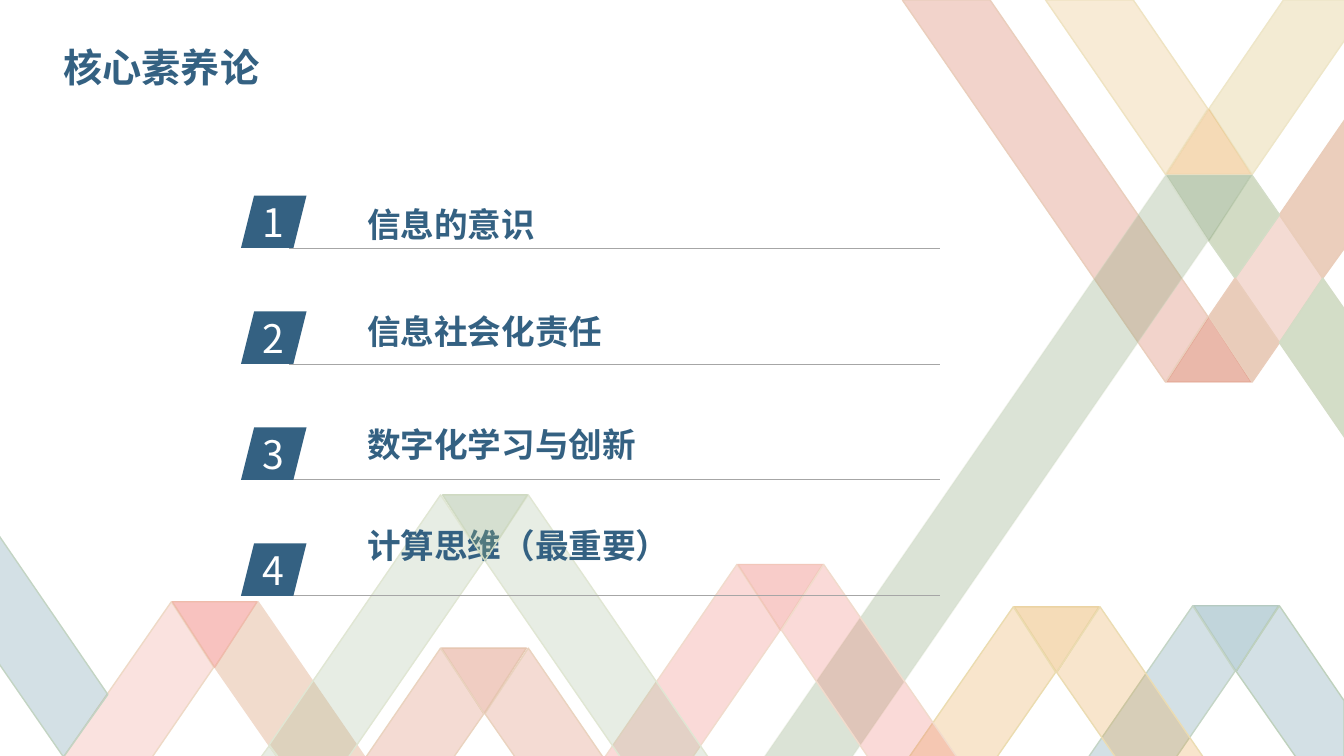
import dataclasses
import typing

import lxml.etree
import pptx
import pptx.dml.color
import pptx.enum.shapes
import pptx.enum.text
import pptx.oxml.ns
import pptx.util

Inches = pptx.util.Inches
Points = tuple[tuple[float, float], ...]


@dataclasses.dataclass(frozen=True)
class Theme:
    font: str = "Noto Sans CJK SC"
    navy: str = "346182"
    white: str = "FFFFFF"
    rule: str = "A6A6A6"
    coral: str = "D57053"
    rose: str = "ED6F65"
    sage: str = "A2B894"
    moss: str = "88A378"
    teal: str = "508799"
    amber: str = "E49B35"
    title_size: int = 28
    item_size: int = 24
    number_size: int = 28


@dataclasses.dataclass(frozen=True)
class Ribbon:
    points: Points
    fill: str
    opacity: int
    line: str
    line_opacity: int = 100


@dataclasses.dataclass(frozen=True)
class Item:
    text: str
    space_before: int


THEME = Theme()
FOLD_WIDTH, FOLD_HEIGHT, FOLD_APEX = 0.84, 0.65, 0.42
ITEM_PITCH = 1.15

ITEMS = (
    Item("信息的意识", 0),
    Item("信息社会化责任", 48),
    Item("数字化学习与创新", 52),
    Item("计算思维（最重要）", 43),
)


def fold(left: float, top: float, points_up: bool = False) -> Points:
    apex_y, base_y = (top, top + FOLD_HEIGHT) if points_up else (top + FOLD_HEIGHT, top)
    return ((left + FOLD_APEX, apex_y), (left + FOLD_WIDTH, base_y), (left, base_y))


RIBBONS = (
    Ribbon(((1.7, 5.97), (2.12, 6.62), (1.49, 7.54), (0.61, 7.54)), "EE8F82", 25, "EED9C6"),
    Ribbon(((2.56, 5.97), (3.64, 7.54), (2.77, 7.54), (2.13, 6.62)), "F1DBCC", 100, "F1DBCC"),
    Ribbon(((7.31, 5.6), (7.74, 6.25), (6.85, 7.54), (5.98, 7.54)), THEME.rose, 25, "F1DBCC"),
    Ribbon(fold(11.57, 3.14, True), THEME.coral, 49, "DF9B83", 49),
    Ribbon(((10.37, 0), (11.24, 0), (11.98, 1.08), (11.56, 1.73)), "E7B05E", 25, "EFE3C2"),
    Ribbon(((12.73, 0), (13.35, 0), (13.35, 0.38), (12.42, 1.73), (11.99, 1.08)),
           "EFE3C2", 71, "EEE6C8"),
    Ribbon(((12.69, 2.13), (13.12, 2.76), (12.69, 3.4), (12.25, 2.76)), THEME.coral, 25, "EAD3BE"),
    Ribbon(((13.35, 1.17), (13.35, 2.44), (13.12, 2.76), (12.69, 2.13)), "EBCEBC", 100, "EACDBA"),
    Ribbon(((12.42, 1.74), (12.69, 2.13), (12.25, 2.76), (11.99, 2.39)), "D2DBC4", 100, "D3DDC7"),
    Ribbon(((12.25, 2.76), (12.69, 3.4), (12.42, 3.79), (11.99, 3.14)), "E9CCBA", 100, "EACDBB"),
    Ribbon(((13.12, 2.76), (13.35, 3.09), (13.35, 4.36), (12.69, 3.4)), "D3DDC7", 100, "D3DCC6"),
    Ribbon(fold(11.57, 1.08, True), THEME.amber, 36, "EBD09D", 36),
    Ribbon(fold(11.57, 1.74), THEME.moss, 53, "B3C4A5", 53),
    Ribbon(((4.37, 4.91), (4.8, 5.56), (3.43, 7.55), (2.79, 7.55), (2.67, 7.39)),
           THEME.sage, 25, "E0E6D3"),
    Ribbon(((5.24, 4.91), (7.05, 7.55), (6.18, 7.55), (4.81, 5.56)), THEME.sage, 25, "E0E6D3"),
    Ribbon(((2.67, 7.4), (2.78, 7.55), (2.56, 7.55)), THEME.sage, 25, "E0E6D3"),
    Ribbon(((-0.04, 5.27), (1.07, 6.89), (0.63, 7.51), (-0.04, 6.54)), THEME.teal, 25, "C3D4C3"),
    Ribbon(((5.24, 6.43), (6, 7.54), (5.13, 7.54), (4.81, 7.08)), THEME.coral, 25, "EAD3BF"),
    Ribbon(fold(4.38, 6.43), THEME.coral, 35, "E6C6B1"),
    Ribbon(fold(7.32, 5.6), THEME.rose, 35, "F2C7BA"),
    Ribbon(fold(11.84, 6.01), THEME.teal, 35, "B5CAC1"),
    Ribbon(((11.83, 6.01), (12.25, 6.66), (11.66, 7.52), (10.79, 7.52)), THEME.teal, 25, "C4D5C6"),
    Ribbon(((12.69, 6.01), (13.33, 6.95), (13.33, 7.52), (12.86, 7.52), (12.26, 6.66)),
           THEME.teal, 25, "BFD1BD"),
    Ribbon(fold(10.06, 6.02), THEME.amber, 35, "EBD3A3"),
    Ribbon(((10.05, 6.02), (10.47, 6.67), (9.86, 7.55), (8.99, 7.55)), THEME.amber, 25, "EBDCB0"),
    Ribbon(((10.91, 6.02), (11.96, 7.55), (11.09, 7.55), (10.48, 6.67)), THEME.amber, 25, "EBDCB2"),
    Ribbon(((4.37, 6.43), (4.8, 7.08), (4.48, 7.54), (3.61, 7.54)), THEME.coral, 25, "EAD3BF"),
    Ribbon(((8.95, 0), (9.82, 0), (11.98, 3.14), (11.56, 3.79)), THEME.coral, 30, "EACEBC"),
    Ribbon(((11.56, 1.74), (11.98, 2.39), (8.43, 7.54), (7.56, 7.54)),
           THEME.moss, 30, "D3DCC5", 30),
    Ribbon(((8.17, 5.6), (9.51, 7.54), (8.63, 7.54), (7.75, 6.25)), THEME.rose, 25, "F1DBCC"),
    Ribbon(fold(1.71, 5.97), "ED5249", 35, "EFBBAB"),
)
TOP_FOLD = Ribbon(fold(4.39, 4.91), "89A67A", 35, "CFDAC2")


def add_element(parent: typing.Any, tag: str, **attributes: str) -> None:
    lxml.etree.SubElement(parent, pptx.oxml.ns.qn(tag), attributes)


def set_attributes(target: typing.Any, values: dict[str, typing.Any]) -> None:
    for name, value in values.items():
        setattr(target, name, value)


def paint(fill: typing.Any, color: str, opacity: int = 100) -> None:
    fill.solid()
    fill.fore_color.rgb = pptx.dml.color.RGBColor.from_string(color)
    if opacity < 100:
        color_element = fill._xPr.find(".//" + pptx.oxml.ns.qn("a:srgbClr"))
        add_element(color_element, "a:alpha", val=str(opacity * 1000))


def draw_ribbon(shapes: typing.Any, ribbon: Ribbon) -> None:
    corners = [(Inches(x), Inches(y)) for x, y in ribbon.points]
    builder = shapes.build_freeform(*corners[0])
    builder.add_line_segments(corners[1:], close=True)
    shape = builder.convert_to_shape()
    shape.shadow.inherit = False
    paint(shape.fill, ribbon.fill, ribbon.opacity)
    paint(shape.line.fill, ribbon.line, ribbon.line_opacity)
    shape.line.width = pptx.util.Pt(1)


def write_run(paragraph: typing.Any, text: str, size: int, color: str, bold: bool) -> None:
    run = paragraph.add_run()
    run.text = text
    set_attributes(run.font, {"name": THEME.font, "size": pptx.util.Pt(size), "bold": bold})
    paint(run.font.fill, color)
    add_element(run.font._element, "a:ea", typeface=THEME.font)


def place(shape: typing.Any, left: float, top: float, width: float, height: float) -> None:
    set_attributes(shape, {"left": Inches(left), "top": Inches(top),
                           "width": Inches(width), "height": Inches(height)})


def format_frame(frame: typing.Any, anchor: typing.Any, wrap: bool = True) -> None:
    set_attributes(frame, {"word_wrap": wrap, "vertical_anchor": anchor,
                           "auto_size": pptx.enum.text.MSO_AUTO_SIZE.NONE})


def draw_number(shapes: typing.Any, number: int) -> None:
    top = 1.94 + (number - 1) * ITEM_PITCH
    group = shapes.add_group_shape().shapes
    rule = group.add_connector(pptx.enum.shapes.MSO_CONNECTOR.STRAIGHT, Inches(2.87),
                               Inches(top + 0.52), Inches(9.32), Inches(top + 0.52))
    paint(rule.line.fill, THEME.rule)
    rule.line.width = pptx.util.Pt(0.5)
    add_element(rule.element.spPr, "a:effectLst")
    tile = group.add_shape(pptx.enum.shapes.MSO_SHAPE.PARALLELOGRAM, Inches(2.39),
                           Inches(top), Inches(0.65), Inches(0.52))
    tile.shadow.inherit = False
    paint(tile.fill, THEME.navy)
    tile.line.fill.background()
    label = group.add_textbox(Inches(2.4), Inches(top - 0.02), Inches(0.63), Inches(0.57))
    format_frame(label.text_frame, pptx.enum.text.MSO_ANCHOR.TOP)
    paragraph = label.text_frame.paragraphs[0]
    paragraph.alignment = pptx.enum.text.PP_ALIGN.CENTER
    write_run(paragraph, str(number), THEME.number_size, THEME.white, False)


def write_items(body: typing.Any) -> None:
    place(body, 3.54, 1.97, 3.5, 3.94)
    frame = body.text_frame
    format_frame(frame, pptx.enum.text.MSO_ANCHOR.TOP)
    for index, item in enumerate(ITEMS):
        paragraph = frame.add_paragraph() if index else frame.paragraphs[0]
        set_attributes(paragraph, {"space_before": pptx.util.Pt(item.space_before),
                                   "line_spacing": 1.0})
        properties = paragraph._p.get_or_add_pPr()
        properties.attrib.update({"marL": "0", "indent": "0"})
        add_element(properties, "a:buNone")
        write_run(paragraph, item.text, THEME.item_size, THEME.navy, True)


def write_title(title: typing.Any) -> None:
    place(title, 0.53, 0.38, 2.17, 0.57)
    format_frame(title.text_frame, pptx.enum.text.MSO_ANCHOR.TOP, False)
    paragraph = title.text_frame.paragraphs[0]
    paragraph.alignment = pptx.enum.text.PP_ALIGN.LEFT
    write_run(paragraph, "核心素养论", THEME.title_size, THEME.navy, True)


def main() -> None:
    presentation = pptx.Presentation()
    set_attributes(presentation, {"slide_width": Inches(13.33), "slide_height": Inches(7.5)})
    slide = presentation.slides.add_slide(presentation.slide_layouts[1])
    shapes = slide.shapes
    title, body = shapes.title, slide.placeholders[1]
    for ribbon in RIBBONS:
        draw_ribbon(shapes, ribbon)
    for number in range(1, len(ITEMS) + 1):
        draw_number(shapes, number)
    write_items(body)
    shapes.element.append(body.element)
    draw_ribbon(shapes, TOP_FOLD)
    write_title(title)
    shapes.element.append(title.element)
    presentation.save("out.pptx")


if __name__ == "__main__":
    main()
